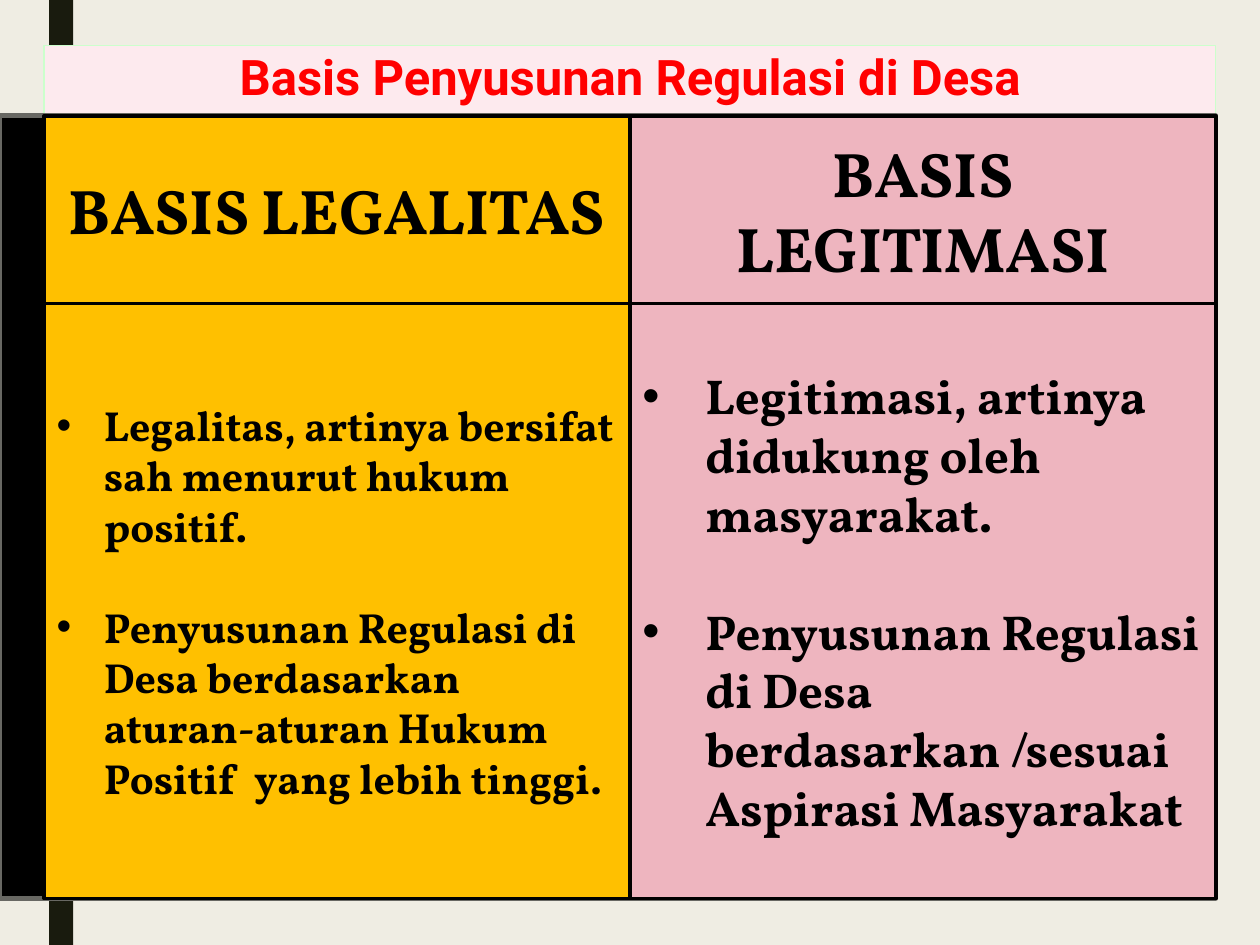
import dataclasses

import lxml.etree
import pptx
import pptx.dml.color
import pptx.enum.shapes
import pptx.enum.text
import pptx.oxml.ns
import pptx.util

Pt = pptx.util.Pt
ALIGN = pptx.enum.text.PP_ALIGN
MIDDLE = pptx.enum.text.MSO_ANCHOR.MIDDLE


@dataclasses.dataclass(frozen=True)
class Theme:
    """Colours, fonts and type sizes of the slide."""
    background: str = "EFEDE3"
    bar: str = "191B0E"
    ink: str = "000000"
    paper: str = "FFFFFF"
    panel_line: str = "686863"
    title_fill: str = "FDEAEE"
    title_line: str = "CCFFCC"
    title_text: str = "FF0000"
    legality: str = "FFC000"
    legitimacy: str = "EEB5BF"
    title_font: str = "Roboto"
    body_font: str = "Vollkorn"
    title_size: int = 28
    heading_size: int = 36
    line_height: float = 1.2


THEME = Theme()
LEFT, MIDDLE_X, RIGHT = 25.2, 360, 694.8
TOP, SPLIT, BOTTOM = 66.24, 173.5, 513.5
COLUMNS = (
    (LEFT, THEME.legality, "BASIS LEGALITAS", 24, 27, (
        "Legalitas, artinya bersifat sah menurut hukum positif.",
        "Penyusunan Regulasi di Desa berdasarkan aturan-aturan Hukum Positif  yang lebih tinggi.")),
    (MIDDLE_X, THEME.legitimacy, "BASIS LEGITIMASI", 28, 36, (
        "Legitimasi, artinya didukung oleh masyarakat.",
        "Penyusunan Regulasi di Desa berdasarkan /sesuai Aspirasi Masyarakat")),
)


def rgb(value):
    """Return a colour object for a hexadecimal value."""
    return pptx.dml.color.RGBColor.from_string(value)


def paint(shape, fill, line=None, width=0):
    """Set the fill and the outline of a shape."""
    shape.fill.solid()
    shape.fill.fore_color.rgb = rgb(fill)
    if line is None:
        shape.line.fill.background()
    else:
        shape.line.color.rgb = rgb(line)
        shape.line.width = Pt(width)


def add_box(slide, left, top, right, bottom, fill, line=None, width=0):
    """Add a rectangle given by its four edges."""
    shape = slide.shapes.add_shape(
        pptx.enum.shapes.MSO_SHAPE.RECTANGLE,
        Pt(left), Pt(top), Pt(right - left), Pt(bottom - top))
    shape.shadow.inherit = False
    paint(shape, fill, line, width)
    shape.text_frame.word_wrap = True
    shape.text_frame.vertical_anchor = MIDDLE
    return shape


def add_text(paragraph, text, font, size, color, alignment):
    """Add one bold run to a paragraph."""
    paragraph.alignment = alignment
    run = paragraph.add_run()
    run.text = text
    run.font.name = font
    run.font.size = Pt(size)
    run.font.bold = True
    run.font.color.rgb = rgb(color)


def add_bullet(paragraph, indent):
    """Give a paragraph a hanging round bullet."""
    properties = paragraph._p.get_or_add_pPr()
    properties.set("marL", str(Pt(indent)))
    properties.set("indent", str(Pt(-indent)))
    for tag, name, value in (("a:buFont", "typeface", "Arial"), ("a:buChar", "char", "•")):
        bullet = lxml.etree.SubElement(properties, pptx.oxml.ns.qn(tag))
        bullet.set(name, value)


def add_title(slide, text):
    """Place and format the title placeholder."""
    title = slide.shapes.title
    title.left, title.top = Pt(LEFT), Pt(26)
    title.width, title.height = Pt(RIGHT - LEFT), Pt(39.6)
    paint(title, THEME.title_fill, THEME.title_line, 0.75)
    frame = title.text_frame
    frame.word_wrap = True
    frame.auto_size = pptx.enum.text.MSO_AUTO_SIZE.NONE
    frame.vertical_anchor = MIDDLE
    paragraph = frame.paragraphs[0]
    paragraph.line_spacing = 0.89
    add_text(paragraph, text, THEME.title_font, THEME.title_size, THEME.title_text, ALIGN.CENTER)


def add_column(slide, left, fill, heading, size, indent, points):
    """Add a heading cell and the bulleted cell below it."""
    right = left + MIDDLE_X - LEFT
    header = add_box(slide, left, TOP, right, SPLIT, fill, THEME.ink, 2)
    add_text(header.text_frame.paragraphs[0], heading, THEME.body_font,
             THEME.heading_size, THEME.ink, ALIGN.CENTER)
    frame = add_box(slide, left, SPLIT, right, BOTTOM, fill, THEME.ink, 2).text_frame
    for index, point in enumerate(points):
        paragraph = frame.add_paragraph() if index else frame.paragraphs[0]
        if index:
            paragraph.space_before = Pt(round(size * THEME.line_height, 1))
        add_text(paragraph, point, THEME.body_font, size, THEME.ink, ALIGN.LEFT)
        add_bullet(paragraph, indent)


def main():
    """Build the slide and save it."""
    presentation = pptx.Presentation()
    presentation.slide_width, presentation.slide_height = Pt(720), Pt(540)
    slide = presentation.slides.add_slide(presentation.slide_layouts[5])
    slide.background.fill.solid()
    slide.background.fill.fore_color.rgb = rgb(THEME.background)

    bar = add_box(slide, 28.1, 0, 41.8, 540, THEME.bar)
    slide.shapes.title.element.addprevious(bar.element)
    add_title(slide, "Basis Penyusunan Regulasi di Desa")
    for left, right, fill in ((0, MIDDLE_X, THEME.ink), (MIDDLE_X, RIGHT, THEME.paper)):
        add_box(slide, left, TOP, right, BOTTOM, fill, THEME.panel_line, 2.75)
    for column in COLUMNS:
        add_column(slide, *column)
    presentation.save("out.pptx")


if __name__ == "__main__":
    main()
